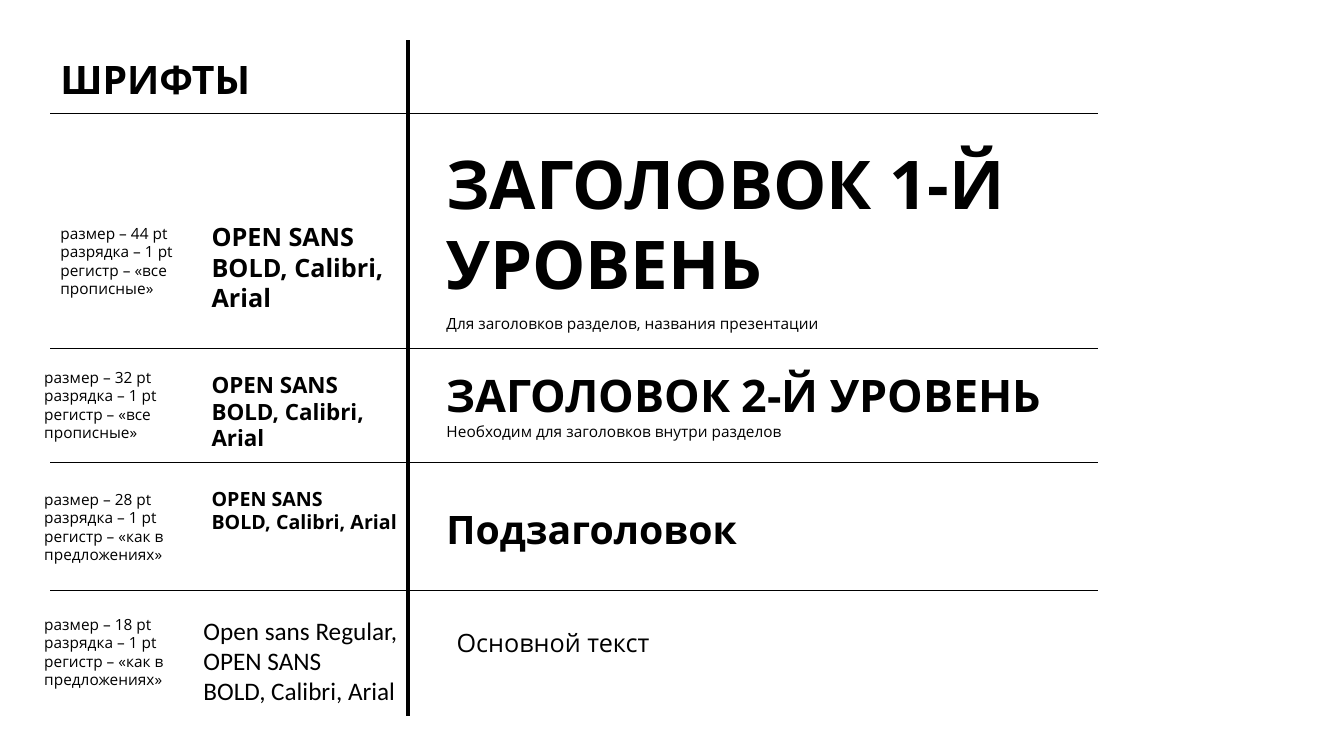
from pptx import Presentation
from pptx.dml.color import RGBColor
from pptx.enum import shapes, text
from pptx.oxml import ns
from pptx.util import Inches, Pt

COLORS = {"ink": "000000", "paper": "FFFFFF"}
BODY_FONT = "Open Sans"
LEFT, RIGHT = 0.5, 10.89
DIVIDER_X = 4.05
SAMPLE_X = 4.33
BOLD_FONTS = ["OPEN SANS", "BOLD, Calibri, Arial"]
UPPERCASE = "все прописные"
SENTENCE_CASE = "как в предложениях"

# Boxes are (left, top, width, height); every row is placed from its own top.
ROWS = [
    {"top": 1.12, "size": 44, "case": UPPERCASE, "settings": (0.5, 1.05, 2.05, 1.11),
     "fonts": BOLD_FONTS, "fonts_box": (2, 1.03, 2.05, 1.01),
     "fonts_format": {"size": 18, "bold": True},
     "sample": "ЗАГОЛОВОК 1-Й УРОВЕНЬ", "sample_box": (SAMPLE_X, 0.24, 8.3, 1.72),
     "sample_format": {"size": 48, "bold": True},
     "note": "Для заголовков разделов, названия презентации",
     "note_box": (SAMPLE_X, 1.95, 4.71, 0.29)},
    {"top": 3.45, "size": 32, "case": UPPERCASE, "settings": (0.34, 0.15, 2.05, 1.11),
     "fonts": BOLD_FONTS, "fonts_box": (2, 0.18, 1.79, 0.91),
     "fonts_format": {"size": 16, "bold": True},
     "sample": "ЗАГОЛОВОК 2-Й УРОВЕНЬ", "sample_box": (SAMPLE_X, 0.15, 8.3, 0.64),
     "sample_format": {"size": 32, "bold": True},
     "note": "Необходим для заголовков внутри разделов",
     "note_box": (SAMPLE_X, 0.69, 6.51, 0.56)},
    {"top": 4.59, "size": 28, "case": SENTENCE_CASE, "settings": (0.34, 0.22, 2.05, 1.11),
     "fonts": BOLD_FONTS, "fonts_box": (2, 0.19, 2.05, 0.57),
     "fonts_format": {"size": 14, "bold": True},
     "sample": "Подзаголовок", "sample_box": (SAMPLE_X, 0.37, 8.3, 0.57),
     "sample_format": {"size": 28, "bold": True}},
    {"top": 5.85, "size": 18, "case": SENTENCE_CASE, "settings": (0.34, 0.2, 2.05, 1.11),
     "fonts": ["Open sans Regular, OPEN SANS", "BOLD, Calibri, Arial"],
     "fonts_box": (1.92, 0.2, 2.13, 1.01),
     "fonts_format": {"size": 18, "name": "Calibri"},
     "sample": "Основной текст", "sample_box": (4.43, 0.32, 8.3, 0.4),
     "sample_format": {"size": 18}},
]


def color(name):
    return RGBColor.from_string(COLORS[name])


def add_text(slide, box, lines, size=11, **font_format):
    shape = slide.shapes.add_textbox(*(Inches(length) for length in box))
    frame = shape.text_frame
    frame.word_wrap = True
    frame.auto_size = text.MSO_AUTO_SIZE.SHAPE_TO_FIT_TEXT
    values = {"name": BODY_FONT, "size": Pt(size), **font_format}
    for index, line in enumerate(lines):
        paragraph = frame.add_paragraph() if index else frame.paragraphs[0]
        run = paragraph.add_run()
        run.text = line
        run.font.color.rgb = color("ink")
        for name, value in values.items():
            setattr(run.font, name, value)


def add_rule(slide, start, end, width=0.25):
    line = slide.shapes.add_connector(
        shapes.MSO_CONNECTOR.STRAIGHT, *(Inches(length) for length in start + end))
    line.line.color.rgb = color("ink")
    line.line.width = Pt(width)
    properties = line._element.spPr
    properties.append(properties.makeelement(ns.qn("a:effectLst"), {}))


def add_header(slide, box):
    add_text(slide, box, ["ШРИФТЫ"], size=28, bold=True)


def add_style_row(slide, row):
    """Rule on top, then settings, font names, sample and optional note."""
    top = row["top"]

    def placed(box):
        left, offset, width, height = box
        return left, top + offset, width, height

    settings = [f"размер – {row['size']} pt", "разрядка – 1 pt",
                f"регистр – «{row['case']}»"]
    add_rule(slide, (LEFT, top), (RIGHT, top))
    add_text(slide, placed(row["settings"]), settings)
    add_text(slide, placed(row["fonts_box"]), row["fonts"], **row["fonts_format"])
    add_text(slide, placed(row["sample_box"]), [row["sample"]], **row["sample_format"])
    if "note" in row:
        add_text(slide, placed(row["note_box"]), [row["note"]])


def build_fonts_slide(presentation):
    slide = presentation.slides.add_slide(presentation.slide_layouts[6])
    slide.background.fill.solid()
    slide.background.fill.fore_color.rgb = color("paper")
    add_rule(slide, (DIVIDER_X, 0.4), (DIVIDER_X, 7.1), width=2.75)
    add_header(slide, (LEFT, 0.5, 4.71, 0.57))
    for row in ROWS:
        add_style_row(slide, row)


def main():
    presentation = Presentation()
    presentation.slide_width = Inches(13.33)
    presentation.slide_height = Inches(7.5)
    build_fonts_slide(presentation)
    presentation.save("out.pptx")


if __name__ == "__main__":
    main()
